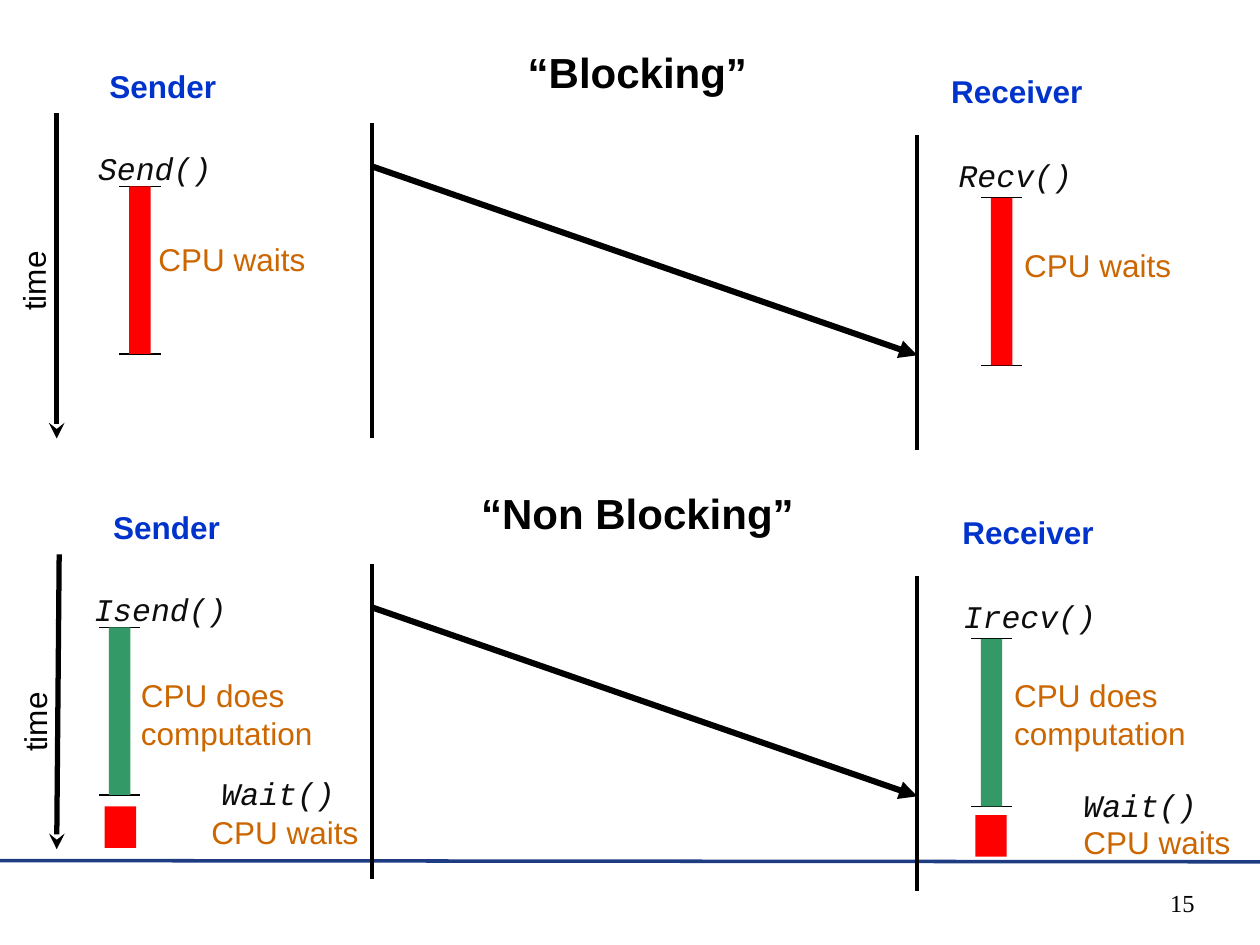
from dataclasses import dataclass

from lxml import etree
from pptx import Presentation
from pptx.dml.color import RGBColor
from pptx.enum.shapes import MSO_CONNECTOR, MSO_SHAPE
from pptx.enum.text import MSO_ANCHOR, MSO_AUTO_SIZE, PP_ALIGN
from pptx.oxml.ns import qn
from pptx.util import Inches, Pt

STRAIGHT = MSO_CONNECTOR.STRAIGHT
RECTANGLE = MSO_SHAPE.RECTANGLE
TOP = MSO_ANCHOR.TOP
NO_AUTOFIT = MSO_AUTO_SIZE.NONE
LEFT, RIGHT = PP_ALIGN.LEFT, PP_ALIGN.RIGHT


@dataclass(frozen=True)
class Theme:
    """Colours, fonts and type sizes of the slide."""
    ink: str = "000000"
    code: str = "0D0D0D"
    role: str = "0033CC"
    note: str = "CC6600"
    waiting: str = "FF0000"
    computing: str = "339966"
    footer: str = "1E3C82"
    sans: str = "Arial"
    mono: str = "Courier New"
    serif: str = "Times New Roman"
    title_size: int = 24
    label_size: int = 18
    page_size: int = 14


THEME = Theme()
ROLE = dict(color=THEME.role, bold=True)
CALL = dict(color=THEME.code, font=THEME.mono, italic=True)
NOTE = dict(color=THEME.note)
TITLE = dict(size=THEME.title_size, bold=True)
TIME = dict(rotation=270)

PANEL_PITCH = 3.5
SENDER_X, RECEIVER_X = 2.95, 7.28
LIFELINE_LENGTH = 2.5
SPAN_HEIGHT, SPAN_WIDTH, CAP_WIDTH = 1.33, 0.17, 0.33
SENDER_SPAN_Y, RECEIVER_SPAN_Y = 1.48, 1.57

PANELS = [
    {
        "labels": [
            ("“Blocking”", 4.09, 0.32, 1.94, TITLE),
            ("Sender", 0.77, 0.48, 1.05, ROLE),
            ("Receiver", 7.45, 0.52, 1.24, ROLE),
            ("Send()", 0.68, 1.13, 1.1, CALL),
            ("Recv()", 7.51, 1.19, 1.1, CALL),
            ("CPU waits", 1.16, 1.86, 1.37, NOTE),
            ("CPU waits", 8.03, 1.9, 1.37, NOTE),
            ("time", -0.07, 2.03, 0.67, TIME),
        ],
        "time_axis": (0.45, 0.9, 0.45, 3.48),
        "spans": [(1.11, SENDER_SPAN_Y), (7.95, RECEIVER_SPAN_Y)],
        "span_color": THEME.waiting,
        "waits": [],
    },
    {
        "labels": [
            ("“Non Blocking”", 3.72, 0.32, 2.68, TITLE),
            ("Sender", 0.8, 0.48, 1.05, ROLE),
            ("Receiver", 7.54, 0.52, 1.24, ROLE),
            ("Isend()", 0.65, 1.13, 1.25, CALL),
            ("Irecv()", 7.55, 1.19, 1.25, CALL),
            ("CPU does\ncomputation", 1.02, 1.82, 1.56, NOTE),
            ("CPU does\ncomputation", 7.95, 1.82, 1.56, NOTE),
            ("Wait()", 1.66, 2.59, 1.1, CALL),
            ("Wait()", 8.5, 2.69, 1.1, CALL),
            ("CPU waits", 1.58, 2.9, 1.37, NOTE),
            ("CPU waits", 8.5, 2.98, 1.37, NOTE),
            ("time", -0.06, 2.03, 0.67, TIME),
        ],
        "time_axis": (0.47, 0.9, 0.45, 3.24),
        "spans": [(0.95, SENDER_SPAN_Y), (7.87, RECEIVER_SPAN_Y)],
        "span_color": THEME.computing,
        "waits": [(0.83, 2.9), (7.74, 2.97)],
    },
]
WAIT_WIDTH, WAIT_HEIGHT = 0.25, 0.33


def add_text(slide, text, left, top, width, *, height=None, size=THEME.label_size,
             font=THEME.sans, color=THEME.ink, bold=False, italic=False,
             align=LEFT, rotation=0):
    lines = text.split("\n")
    if height is None:
        height = 0.5 if size == THEME.title_size else 0.1 + 0.3 * len(lines)
    box = slide.shapes.add_textbox(Inches(left), Inches(top), Inches(width), Inches(height))
    box.rotation = rotation
    frame = box.text_frame
    frame.word_wrap = align == RIGHT
    frame.auto_size = NO_AUTOFIT
    frame.vertical_anchor = TOP
    frame.text = text
    for paragraph in frame.paragraphs:
        paragraph.alignment = align
        for run in paragraph.runs:
            run.font.name = font
            run.font.size = Pt(size)
            run.font.bold = bold
            run.font.italic = italic
            run.font.color.rgb = RGBColor.from_string(color)


def add_line(slide, x1, y1, x2, y2, weight, color=THEME.ink, arrowhead=None):
    connector = slide.shapes.add_connector(
        STRAIGHT, Inches(x1), Inches(y1), Inches(x2), Inches(y2))
    connector.line.width = Pt(weight)
    connector.line.color.rgb = RGBColor.from_string(color)
    if arrowhead:
        etree.SubElement(connector.line._get_or_add_ln(), qn("a:tailEnd"), type=arrowhead)
    etree.SubElement(connector._element.spPr, qn("a:effectLst"))


def add_bar(slide, left, top, width, height, color):
    bar = slide.shapes.add_shape(
        RECTANGLE, Inches(left), Inches(top), Inches(width), Inches(height))
    bar.shadow.inherit = False
    bar.fill.solid()
    bar.fill.fore_color.rgb = RGBColor.from_string(color)
    bar.line.fill.background()


def add_span(slide, center, top, color):
    bottom = top + SPAN_HEIGHT
    add_line(slide, center, top, center, bottom, 0.75)
    for y in (top, bottom):
        add_line(slide, center - CAP_WIDTH / 2, y, center + CAP_WIDTH / 2, y, 0.75)
    add_bar(slide, center - SPAN_WIDTH / 2, top, SPAN_WIDTH, SPAN_HEIGHT, color)


def add_panel(slide, panel, offset):
    for x, y in ((SENDER_X, 0.98), (RECEIVER_X, 1.07)):
        add_line(slide, x, offset + y, x, offset + y + LIFELINE_LENGTH, 2.25)
    add_line(slide, SENDER_X, offset + 1.32, RECEIVER_X, offset + 2.82, 3.5,
             arrowhead="triangle")
    x1, y1, x2, y2 = panel["time_axis"]
    add_line(slide, x1, offset + y1, x2, offset + y2, 3, arrowhead="stealth")
    for center, top in panel["spans"]:
        add_span(slide, center, offset + top, panel["span_color"])
    for left, top in panel["waits"]:
        add_bar(slide, left, offset + top, WAIT_WIDTH, WAIT_HEIGHT, THEME.waiting)
    for text, left, top, width, style in panel["labels"]:
        add_text(slide, text, left, offset + top, width, **style)


def main():
    """Build the slide on blocking and non-blocking message passing."""
    deck = Presentation()
    deck.slide_width, deck.slide_height = Inches(10), Inches(7.5)
    slide = deck.slides.add_slide(deck.slide_layouts[6])
    add_line(slide, 0, 6.83, 10, 6.84, 2, color=THEME.footer)
    add_text(slide, "15", 7.5, 7, 2.08, height=0.5, size=THEME.page_size,
             font=THEME.serif, align=RIGHT)
    for index, panel in enumerate(PANELS):
        add_panel(slide, panel, index * PANEL_PITCH)
    deck.save("out.pptx")


if __name__ == "__main__":
    main()
